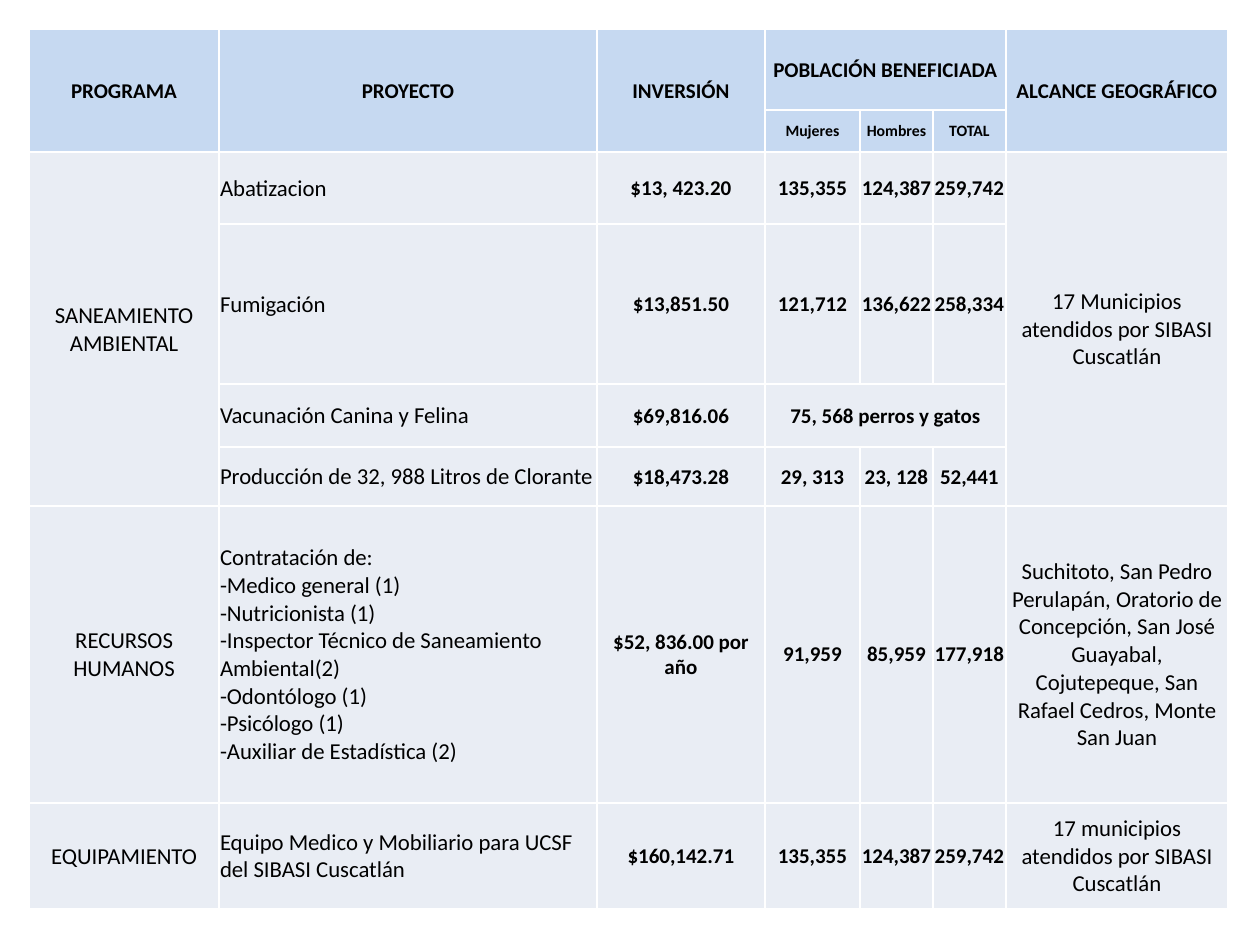
from copy import deepcopy

from lxml import etree
from pptx import Presentation
from pptx.dml.color import RGBColor
from pptx.enum.text import MSO_ANCHOR, PP_ALIGN
from pptx.oxml.ns import qn
from pptx.util import Emu, Pt

MIDDLE = MSO_ANCHOR.MIDDLE
LEFT, CENTER = PP_ALIGN.LEFT, PP_ALIGN.CENTER
PX = 914400 // 126
FONT = "Calibri"
COLORS = {"header": "C6D9F1", "body": "E9EDF4", "text": "000000", "border": "FFFFFF"}

# Content: None marks a cell covered by a merge
STAFF = "\n".join([
    "Contratación de:",
    "-Medico general (1)",
    "-Nutricionista (1)",
    "-Inspector Técnico de Saneamiento Ambiental(2)",
    "-Odontólogo (1)",
    "-Psicólogo (1)",
    "-Auxiliar de Estadística (2)",
])
TOWNS = ("Suchitoto, San Pedro Perulapán, Oratorio de Concepción, San José Guayabal, "
         "Cojutepeque, San Rafael Cedros, Monte San Juan")
ROWS = [
    ["PROGRAMA", "PROYECTO", "INVERSIÓN", "POBLACIÓN BENEFICIADA", None, None,
     "ALCANCE GEOGRÁFICO"],
    [None, None, None, "Mujeres", "Hombres", "TOTAL", None],
    ["SANEAMIENTO AMBIENTAL", "Abatizacion", "$13, 423.20", "135,355", "124,387", "259,742",
     "17 Municipios atendidos por SIBASI Cuscatlán"],
    [None, "Fumigación", "$13,851.50", "121,712", "136,622", "258,334", None],
    [None, "Vacunación Canina y Felina", "$69,816.06", "75, 568 perros y gatos", None, None, None],
    [None, "Producción de 32, 988 Litros de Clorante", "$18,473.28",
     "29, 313", "23, 128", "52,441", None],
    ["RECURSOS HUMANOS", STAFF, "$52, 836.00 por año", "91,959", "85,959", "177,918", TOWNS],
    ["EQUIPAMIENTO", "Equipo Medico y Mobiliario para UCSF del SIBASI Cuscatlán", "$160,142.71",
     "135,355", "124,387", "259,742", "17 municipios atendidos por SIBASI Cuscatlán"],
]
# First and last cell (row, column) of each merged block
MERGES = [
    ((0, 0), (1, 0)), ((0, 1), (1, 1)), ((0, 2), (1, 2)), ((0, 6), (1, 6)),
    ((0, 3), (0, 5)), ((4, 3), (4, 5)), ((2, 0), (5, 0)), ((2, 6), (5, 6)),
]

# Layout in px
SLIDE_SIZE = (1260, 945)
TABLE_LEFT, TABLE_TOP = 29, 29
COLUMN_WIDTHS = [190, 378, 168, 95, 73, 73, 222]
ROW_HEIGHTS = [81, 42, 72, 160, 63, 59, 297, 106]
HEADER_ROWS = 2
PROJECT_COLUMN = 1
FIGURE_COLUMNS = range(2, 6)
CELL_FORMAT = {
    "vertical_anchor": MIDDLE,
    "margin_left": PX, "margin_right": PX, "margin_top": PX, "margin_bottom": 0,
}
# Font formats by role
TEXT_FORMATS = {
    "header": {"size": Pt(12), "bold": True},
    "subheader": {"size": Pt(9), "bold": True},
    "figure": {"size": Pt(12), "bold": True},
    "label": {"size": Pt(13), "bold": False},
}


def text_role(row, column):
    if row < HEADER_ROWS:
        return "header" if row == 0 else "subheader"
    return "figure" if column in FIGURE_COLUMNS else "label"


def set_attributes(target, values):
    for name, value in values.items():
        setattr(target, name, value)


def add_borders(cell):
    properties = cell._tc.get_or_add_tcPr()
    for position, side in enumerate(("lnL", "lnR", "lnT", "lnB")):
        line = etree.Element(qn(f"a:{side}"), w=str(Pt(1)))
        fill = etree.SubElement(line, qn("a:solidFill"))
        etree.SubElement(fill, qn("a:srgbClr"), val=COLORS["border"])
        properties.insert(position, line)


def write_text(cell, text, role, alignment):
    paragraph = cell.text_frame.paragraphs[0]
    paragraph.text = text.replace("\n", "\v")
    paragraph.alignment = alignment
    for run in paragraph.runs:
        set_attributes(run.font, {"name": FONT, **TEXT_FORMATS[role]})
        run.font.color.rgb = RGBColor.from_string(COLORS["text"])
    # Line breaks take the size of the text around them
    for line_break in paragraph._p.findall(qn("a:br")):
        line_break.append(deepcopy(paragraph.runs[0]._r.rPr))


def main():
    presentation = Presentation()
    presentation.slide_width, presentation.slide_height = (Emu(side * PX) for side in SLIDE_SIZE)
    slide = presentation.slides.add_slide(presentation.slide_layouts[6])

    # Table grid
    frame = slide.shapes.add_table(
        len(ROWS), len(COLUMN_WIDTHS), TABLE_LEFT * PX, TABLE_TOP * PX,
        sum(COLUMN_WIDTHS) * PX, sum(ROW_HEIGHTS) * PX)
    table = frame.table
    set_attributes(table, {"first_row": False, "horz_banding": False})
    for column, width in zip(table.columns, COLUMN_WIDTHS):
        column.width = Emu(width * PX)
    for row, height in zip(table.rows, ROW_HEIGHTS):
        row.height = Emu(height * PX)
    for first, last in MERGES:
        table.cell(*first).merge(table.cell(*last))

    # Cells
    for row, texts in enumerate(ROWS):
        for column, text in enumerate(texts):
            cell = table.cell(row, column)
            set_attributes(cell, CELL_FORMAT)
            cell.fill.solid()
            fill = "header" if row < HEADER_ROWS else "body"
            cell.fill.fore_color.rgb = RGBColor.from_string(COLORS[fill])
            add_borders(cell)
            if text:
                is_project = row >= HEADER_ROWS and column == PROJECT_COLUMN
                write_text(cell, text, text_role(row, column), LEFT if is_project else CENTER)

    presentation.save("out.pptx")


if __name__ == "__main__":
    main()
